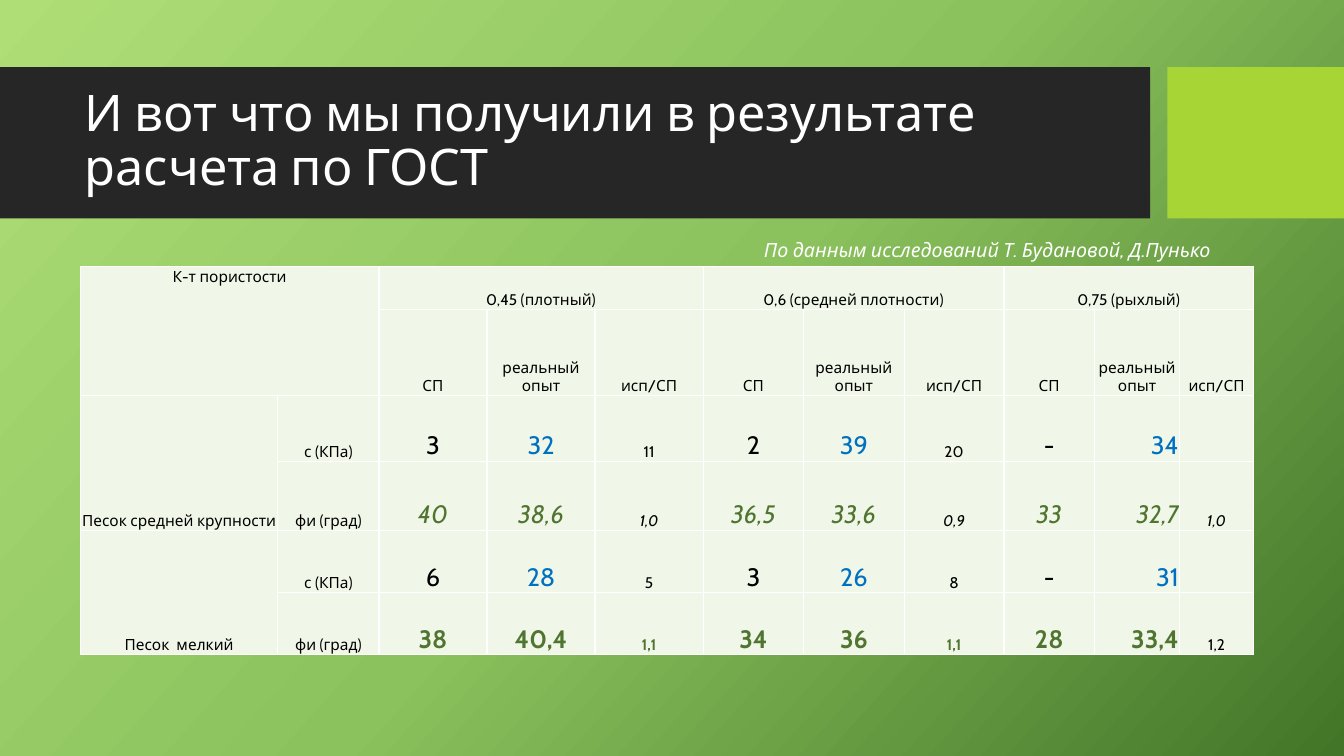
from copy import deepcopy
from dataclasses import dataclass

from lxml.etree import SubElement
from pptx import Presentation
from pptx.dml.color import RGBColor
from pptx.enum.shapes import MSO_SHAPE as Preset
from pptx.enum.text import MSO_ANCHOR as Anchor, MSO_AUTO_SIZE as AutoSize, PP_ALIGN as Align
from pptx.oxml.ns import qn
from pptx.slide import Slide
from pptx.table import Table, _Cell as Cell
from pptx.text.text import _Paragraph as Paragraph
from pptx.util import Pt

FONT = "Cabin"
WHITE, BLACK, BLUE, GREEN = "FFFFFF", "000000", "0070C0", "507531"
CELL_FILL = "F1F7E8"
GRADIENT = [(0, "AFDE77"), (50, "8BC25D"), (100, "437528")]
COLUMN_WIDTHS = [141, 72.2, 77.2, 77.2, 77.2, 71.8, 71.8, 71.4, 64.6, 61, 52.6]
ROW_HEIGHTS = [30.8, 61.4, 46.9, 49.2, 44.5, 44.3]
DENSITIES = ["0,45 (плотный)", "0,6 (средней плотности)", "0,75 (рыхлый)"]
MEASURES = ["СП", "реальный опыт", "исп/СП"]
SOILS = ["Песок средней крупности", "Песок  мелкий"]
FIRST_VALUE_COLUMN = 2
LAST_TEST_COLUMN = 9


@dataclass(frozen=True)
class Style:
    size: float = 11
    color: str = BLACK
    bold: bool = False
    italic: bool = False


@dataclass(frozen=True)
class Bar:
    left: float
    width: float
    color: str


@dataclass(frozen=True)
class ResultRow:
    label: str
    values: list[str]
    styles: tuple[Style, Style, Style]
    last_style: Style


PLAIN = Style()
PLAIN_ITALIC = Style(italic=True)
LARGE = Style(18)
LARGE_BLUE = Style(18, BLUE)
GREEN_ITALIC = Style(18, GREEN, italic=True)
GREEN_BOLD = Style(18, GREEN, bold=True)
SMALL_GREEN_BOLD = Style(11, GREEN, bold=True)
COHESION_STYLES = (LARGE, LARGE_BLUE, PLAIN)

BARS = [Bar(0, 821.6, "262626"), Bar(833.8, 126.2, "A7D535")]
RESULTS = [
    ResultRow("с (КПа)", ["3", "32", "11", "2", "39", "20", "-", "34", ""],
              COHESION_STYLES, PLAIN),
    ResultRow("фи (град)", ["40", "38,6", "1,0", "36,5", "33,6", "0,9", "33", "32,7", "1,0"],
              (GREEN_ITALIC, GREEN_ITALIC, PLAIN_ITALIC), PLAIN_ITALIC),
    ResultRow("с (КПа)", ["6", "28", "5", "3", "26", "8", "-", "31", ""],
              COHESION_STYLES, PLAIN),
    ResultRow("фи (град)", ["38", "40,4", "1,1", "34", "36", "1,1", "28", "33,4", "1,2"],
              (GREEN_BOLD, GREEN_BOLD, SMALL_GREEN_BOLD), PLAIN),
]


def rgb(value: str) -> RGBColor:
    return RGBColor.from_string(value)


def add_span(para: Paragraph, text: str, style: Style) -> None:
    span = para.add_run()
    span.text = text
    span.font.name = FONT
    span.font.size = Pt(style.size)
    span.font.bold = style.bold
    span.font.italic = style.italic
    span.font.color.rgb = rgb(style.color)


def paint_background(page: Slide) -> None:
    fill = page.background.fill
    fill.gradient()
    fill.gradient_angle = 318
    stop_list = page.element.find(".//" + qn("a:gsLst"))
    stop_list.insert(1, deepcopy(stop_list[0]))
    for element, stop, (position, color) in zip(stop_list, fill.gradient_stops, GRADIENT):
        element.set("pos", str(position * 1000))
        stop.color.rgb = rgb(color)


def add_bar(page: Slide, bar: Bar) -> None:
    box = page.shapes.add_shape(Preset.RECTANGLE, Pt(bar.left), Pt(48), Pt(bar.width), Pt(108))
    box.shadow.inherit = False
    box.fill.solid()
    box.fill.fore_color.rgb = rgb(bar.color)
    box.line.fill.background()


def fill_title(page: Slide) -> None:
    title = page.shapes.title
    page.shapes.element.append(title.element)
    title.left, title.top, title.width, title.height = Pt(53.3), Pt(59), Pt(756.7), Pt(85)
    frame = title.text_frame
    frame.word_wrap = True
    frame.auto_size = AutoSize.NONE
    frame.vertical_anchor = Anchor.MIDDLE
    para = frame.paragraphs[0]
    para.alignment = Align.LEFT
    para.line_spacing = 0.9
    add_span(para, "И вот что мы получили в результате расчета по ГОСТ", Style(36, WHITE))


def add_source_note(page: Slide) -> None:
    box = page.shapes.add_textbox(Pt(538.6), Pt(166.3), Pt(388), Pt(24.2))
    frame = box.text_frame
    frame.word_wrap = True
    frame.auto_size = AutoSize.SHAPE_TO_FIT_TEXT
    add_span(frame.paragraphs[0], "По данным исследований Т. Будановой, Д.Пунько",
             Style(14, WHITE, italic=True))


def format_cell(cell: Cell) -> None:
    cell.margin_left = cell.margin_right = cell.margin_top = Pt(0.72)
    cell.margin_bottom = Pt(0)
    cell.vertical_anchor = Anchor.BOTTOM
    properties = cell._tc.get_or_add_tcPr()
    for side in ("a:lnL", "a:lnR", "a:lnT", "a:lnB"):
        border = SubElement(properties, qn(side), w=str(Pt(1)))
        SubElement(SubElement(border, qn("a:solidFill")), qn("a:srgbClr"), val=WHITE)
    cell.fill.solid()
    cell.fill.fore_color.rgb = rgb(CELL_FILL)


def write_cell(cell: Cell, text: str, style: Style = PLAIN, align: Align = Align.CENTER) -> None:
    para = cell.text_frame.paragraphs[0]
    para.alignment = align
    if text:
        add_span(para, text, style)


def write_headings(table: Table) -> None:
    corner = table.cell(0, 0)
    corner.merge(table.cell(1, 1))
    corner.vertical_anchor = Anchor.TOP
    write_cell(corner, "К-т пористости")
    for group, density in enumerate(DENSITIES):
        first = FIRST_VALUE_COLUMN + group * len(MEASURES)
        table.cell(0, first).merge(table.cell(0, first + 2))
        write_cell(table.cell(0, first), density)
        for column, measure in enumerate(MEASURES, first):
            write_cell(table.cell(1, column), measure)
    for index, soil in enumerate(SOILS):
        first = 2 + 2 * index
        table.cell(first, 0).merge(table.cell(first + 1, 0))
        write_cell(table.cell(first, 0), soil)


def write_result(table: Table, row: int, result: ResultRow) -> None:
    write_cell(table.cell(row, 1), result.label)
    styles = [*result.styles * len(DENSITIES)]
    styles[-1] = result.last_style
    for column, (text, style) in enumerate(zip(result.values, styles), FIRST_VALUE_COLUMN):
        align = Align.RIGHT if column == LAST_TEST_COLUMN else Align.CENTER
        write_cell(table.cell(row, column), text, style, align)


def add_results_table(page: Slide) -> None:
    table = page.shapes.add_table(
        len(ROW_HEIGHTS), len(COLUMN_WIDTHS), Pt(57.5), Pt(190.5),
        Pt(sum(COLUMN_WIDTHS)), Pt(sum(ROW_HEIGHTS))).table
    table.first_row = table.horz_banding = False
    for column, width in zip(table.columns, COLUMN_WIDTHS):
        column.width = Pt(width)
    for row, height in zip(table.rows, ROW_HEIGHTS):
        row.height = Pt(height)
    for cell in table.iter_cells():
        format_cell(cell)
    write_headings(table)
    for row, result in enumerate(RESULTS, 2):
        write_result(table, row, result)


def main() -> None:
    deck = Presentation()
    deck.slide_width, deck.slide_height = Pt(960), Pt(540)
    page = deck.slides.add_slide(deck.slide_layouts[5])
    paint_background(page)
    for bar in BARS:
        add_bar(page, bar)
    fill_title(page)
    add_results_table(page)
    add_source_note(page)
    deck.save("out.pptx")


if __name__ == "__main__":
    main()
